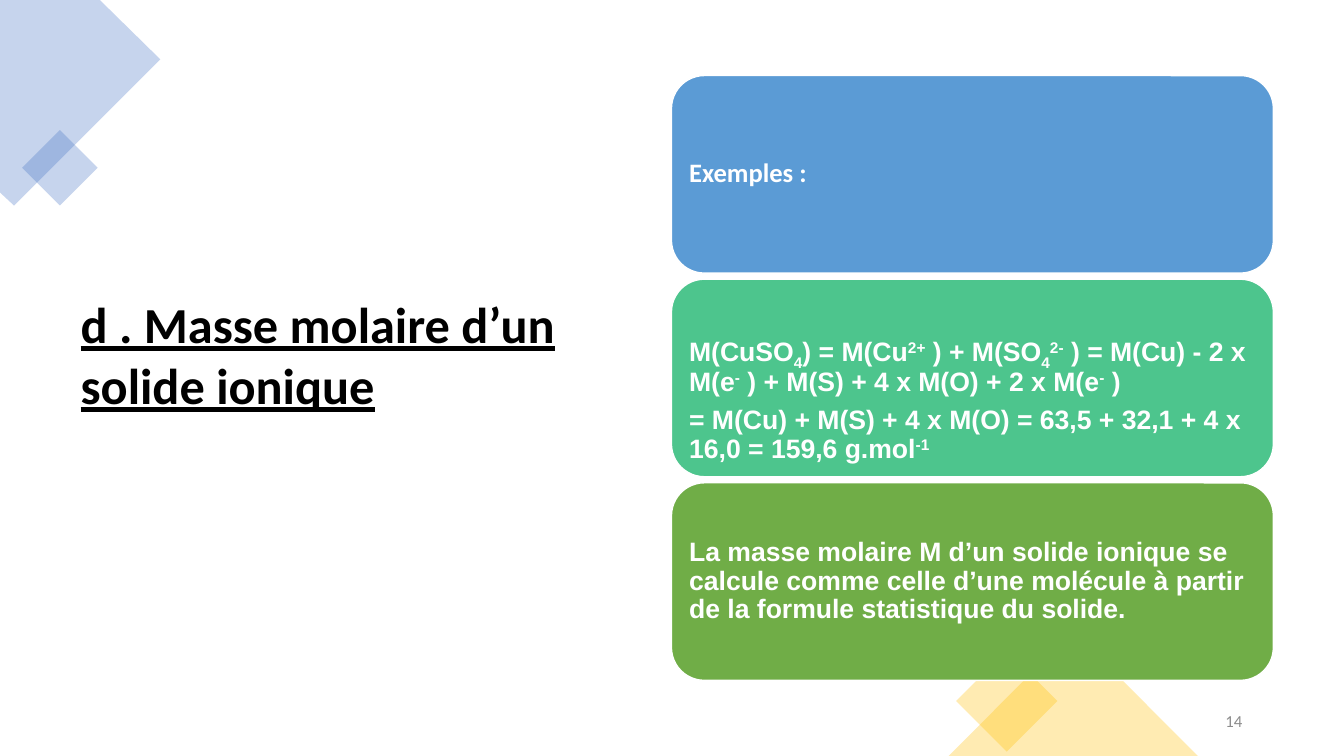
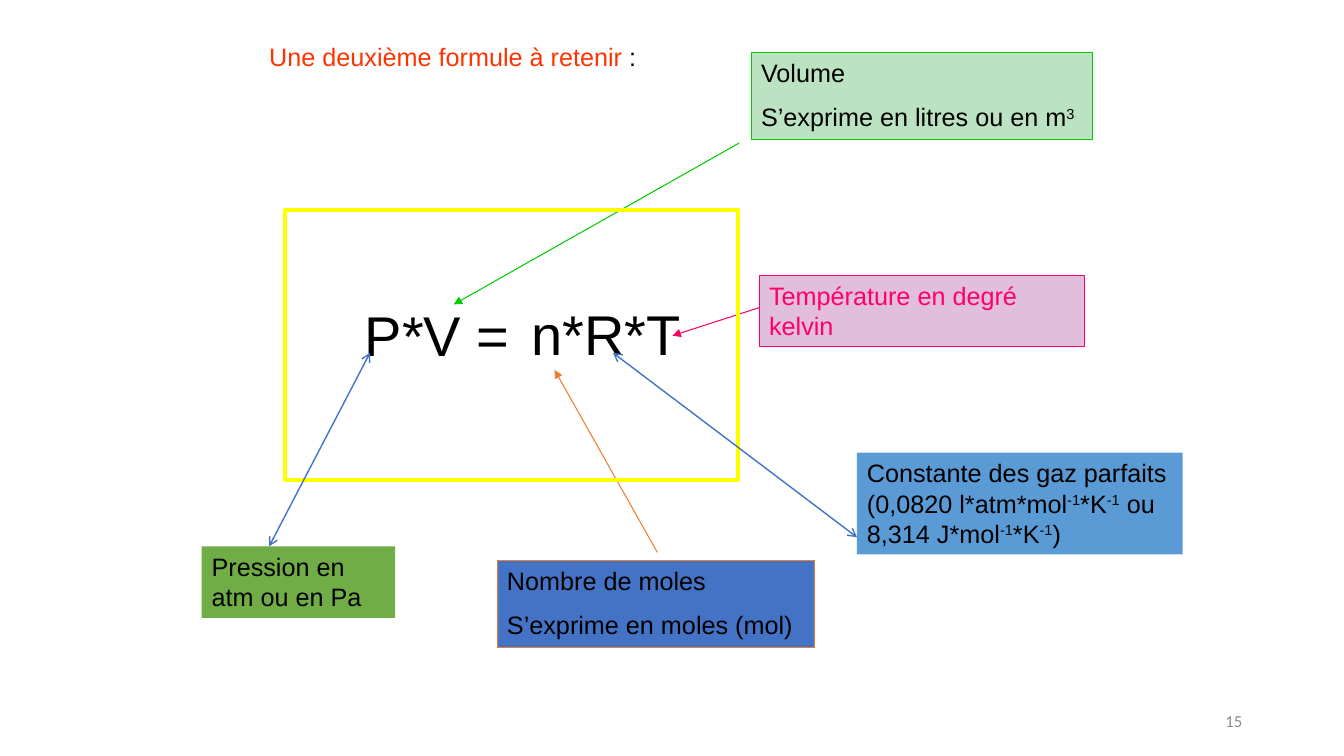
from lxml.etree import SubElement
from pptx import Presentation
from pptx.dml.color import RGBColor
from pptx.enum.shapes import MSO_CONNECTOR, MSO_SHAPE
from pptx.enum.text import MSO_ANCHOR, MSO_AUTO_SIZE, PP_ALIGN
from pptx.oxml.ns import qn
from pptx.util import Inches, Pt

BLACK, WHITE, GREY, RED = "000000", "FFFFFF", "8C8C8C", "FF3300"
BLUE, SKY, MINT, LEAF = "4472C4", "5B9BD5", "4DC58D", "70AD47"
GOLD, ORANGE, GREEN, PINK, YELLOW = "FFC000", "ED7D31", "00CC00", "FF0066", "FFFF00"

TITLE_FONT = {"name": "Calibri", "size": Pt(36), "bold": True, "underline": True}
HEADING_FONT = {"name": "Calibri", "size": Pt(19), "bold": True}
EXAMPLE_FONT = {"name": "Arial", "size": Pt(19), "bold": True}
LABEL_FONT = {"name": "Arial", "size": Pt(18)}
FORMULA_FONT = {"name": "Arial", "size": Pt(40)}
NUMBER_FONT = {"name": "Calibri", "size": Pt(12)}
BASELINES = {"^": "30000", "_": "-25000"}

FRAME = {"word_wrap": True, "auto_size": MSO_AUTO_SIZE.NONE, "vertical_anchor": MSO_ANCHOR.TOP}
MIDDLE = FRAME | {"vertical_anchor": MSO_ANCHOR.MIDDLE}
LEFT = {"alignment": PP_ALIGN.LEFT}
RIGHT = {"alignment": PP_ALIGN.RIGHT}
LABEL_LINES = LEFT | {"space_after": Pt(10)}
EXAMPLE_LINES = LEFT | {"space_after": Pt(7), "line_spacing": 0.9}


def paint(shape, fill=None, line=None, weight=1, opacity=100):
    shape.shadow.inherit = False
    if fill:
        shape.fill.solid()
        shape.fill.fore_color.rgb = RGBColor.from_string(fill)
        if opacity < 100:
            tint = shape.fill._xPr.find(qn("a:solidFill"))[0]
            SubElement(tint, qn("a:alpha")).set("val", str(opacity * 1000))
    else:
        shape.fill.background()
    if line:
        shape.line.color.rgb = RGBColor.from_string(line)
        shape.line.width = Pt(weight)
    else:
        shape.line.fill.background()


def write(shape, lines, font, color=BLACK, line_format=LEFT, frame_format=FRAME):
    frame = shape.text_frame
    for name, value in frame_format.items():
        setattr(frame, name, value)
    for index, line in enumerate(lines):
        paragraph = frame.add_paragraph() if index else frame.paragraphs[0]
        for name, value in line_format.items():
            setattr(paragraph, name, value)
        for piece in filter(None, line.replace("}", "{").split("{")):
            run = paragraph.add_run()
            run.text = piece.lstrip("^_")
            for name, value in font.items():
                setattr(run.font, name, value)
            run.font.color.rgb = RGBColor.from_string(color)
            if piece[0] in BASELINES:
                run._r.get_or_add_rPr().set("baseline", BASELINES[piece[0]])


prs = Presentation()
prs.slide_width, prs.slide_height = Inches(13.33), Inches(7.5)
title_only = prs.slide_layouts[5]
molar_mass = prs.slides.add_slide(title_only)
gas_law = prs.slides.add_slide(title_only)

titles = [
    (molar_mass, "d . Masse molaire d’un solide ionique", (0.7, 0.7, 5.25, 5.62), TITLE_FONT, BLACK, MIDDLE),
    (gas_law, "Une deuxième formule à retenir{ :}", (2.57, 0.36, 7.32, 0.4), LABEL_FONT, RED, FRAME),
]
for slide, text, place, font, color, frame_format in titles:
    title = slide.shapes.title
    title.left, title.top, title.width, title.height = map(Inches, place)
    write(title, [text], font, color, LEFT, frame_format)
colon = gas_law.shapes.title.text_frame.paragraphs[0].runs[1]
colon.font.color.rgb = RGBColor.from_string(BLACK)

corner_points = [(0, 0), (0.99, 0), (1.59, 0.59), (0.14, 2.04), (0, 1.91)]
outline = molar_mass.shapes.build_freeform(0, 0, scale=Inches(1) / 100)
outline.add_line_segments([(x * 100, y * 100) for x, y in corner_points[1:]])
paint(outline.convert_to_shape(), BLUE, opacity=30)

ornaments = [
    (MSO_SHAPE.RECTANGLE, (0.33, 1.4, 0.53, 0.53), 45, BLUE),
    (MSO_SHAPE.RECTANGLE, (9.63, 6.6, 0.71, 0.71), 45, GOLD),
    (MSO_SHAPE.ISOSCELES_TRIANGLE, (9.41, 6.26, 2.47, 1.24), 0, GOLD),
]
for kind, place, rotation, color in ornaments:
    ornament = molar_mass.shapes.add_shape(kind, *map(Inches, place))
    ornament.rotation = rotation
    paint(ornament, color, opacity=30)

examples = [
    (SKY, HEADING_FONT, 0.08, ["Exemples :"]),
    (MINT, EXAMPLE_FONT, 0.52, [
        "M(CuSO{_4}) = M(Cu{^2+} ) + M(SO{_4}{^2-} ) = M(Cu) - 2 x M(e{^-} ) + M(S) + 4 x M(O) + 2 x M(e{^-} )",
        "= M(Cu) + M(S) + 4 x M(O) = 63,5 + 32,1 + 4 x 16,0 = 159,6 g.mol{^-1}",
    ]),
    (LEAF, EXAMPLE_FONT, 0.08, [
        "La masse molaire M d’un solide ionique se calcule comme celle d’une molécule "
        "à partir de la formule statistique du solide.",
    ]),
]
for row, (color, font, top_margin, lines) in enumerate(examples):
    card = molar_mass.shapes.add_shape(
        MSO_SHAPE.ROUNDED_RECTANGLE, Inches(6.66), Inches(0.75 + row * 2.02), Inches(5.97), Inches(1.96))
    paint(card, color, WHITE)
    margins = {f"margin_{side}": Inches(0.08) for side in ("left", "right", "bottom")}
    margins["margin_top"] = Inches(top_margin)
    write(card, lines, font, WHITE, EXAMPLE_LINES, MIDDLE | margins)

for text, place in [("P*V =", (3.52, 2.93, 1.64, 0.77)), ("n*R*T", (5.17, 2.92, 1.81, 0.77))]:
    formula_side = gas_law.shapes.add_textbox(*map(Inches, place))
    write(formula_side, [text], FORMULA_FONT)

ONE_WAY = {"tailEnd": "triangle"}
TWO_WAY = {"headEnd": "arrow", "tailEnd": "arrow"}
arrows = [
    ((6.52, 5.48, 5.5, 3.67), ORANGE, 0.75, ONE_WAY),
    ((7.33, 1.42, 4.5, 3.02), GREEN, 0.75, ONE_WAY),
    ((7.69, 3, 6.67, 3.33), PINK, 0.75, ONE_WAY),
    ((8.5, 5.33, 6.08, 3.5), BLUE, 1, TWO_WAY),
    ((3.67, 3.5, 2.67, 5.42), BLUE, 1, TWO_WAY),
]
for ends, color, weight, tips in arrows:
    if ends[0] == 8.5:
        formula_frame = gas_law.shapes.add_shape(
            MSO_SHAPE.RECTANGLE, Inches(2.83), Inches(2.08), Inches(4.49), Inches(2.68))
        paint(formula_frame, line=YELLOW, weight=3)
    arrow = gas_law.shapes.add_connector(MSO_CONNECTOR.STRAIGHT, *map(Inches, ends))
    arrow.line.color.rgb = RGBColor.from_string(color)
    arrow.line.width = Pt(weight)
    for end, tip in tips.items():
        SubElement(arrow.line._get_or_add_ln(), qn(f"a:{end}")).set("type", tip)
    SubElement(arrow._element.spPr, qn("a:effectLst"))

labels = [
    ((4.93, 5.56, 3.15, 0.86), BLUE, ORANGE, BLACK, ["Nombre de moles", "S’exprime en moles (mol)"]),
    ((7.45, 0.52, 3.39, 0.86), "BBE3C1", GREEN, BLACK, ["Volume", "S’exprime en litres ou en m{^3}"]),
    ((7.53, 2.73, 3.23, 0.71), "E1BDDE", PINK, PINK, ["Température en degré kelvin"]),
    ((2, 5.42, 1.92, 0.71), LEAF, None, BLACK, ["Pression en atm ou en Pa"]),
    ((8.5, 4.49, 3.23, 1.01), SKY, None, BLACK,
     ["Constante des gaz parfaits (0,0820 l*atm*mol{^-1}*K{^-1} ou 8,314 J*mol{^-1}*K{^-1})"]),
]
for place, fill, border, color, lines in labels:
    label = gas_law.shapes.add_shape(MSO_SHAPE.RECTANGLE, *map(Inches, place))
    paint(label, fill, border, 0.75)
    write(label, lines, LABEL_FONT, color, LABEL_LINES)

for number, slide in enumerate(prs.slides, 14):
    page_number = slide.shapes.add_textbox(Inches(9.42), Inches(6.95), Inches(3), Inches(0.4))
    write(page_number, [str(number)], NUMBER_FONT, GREY, RIGHT, MIDDLE)

prs.save("out.pptx")
